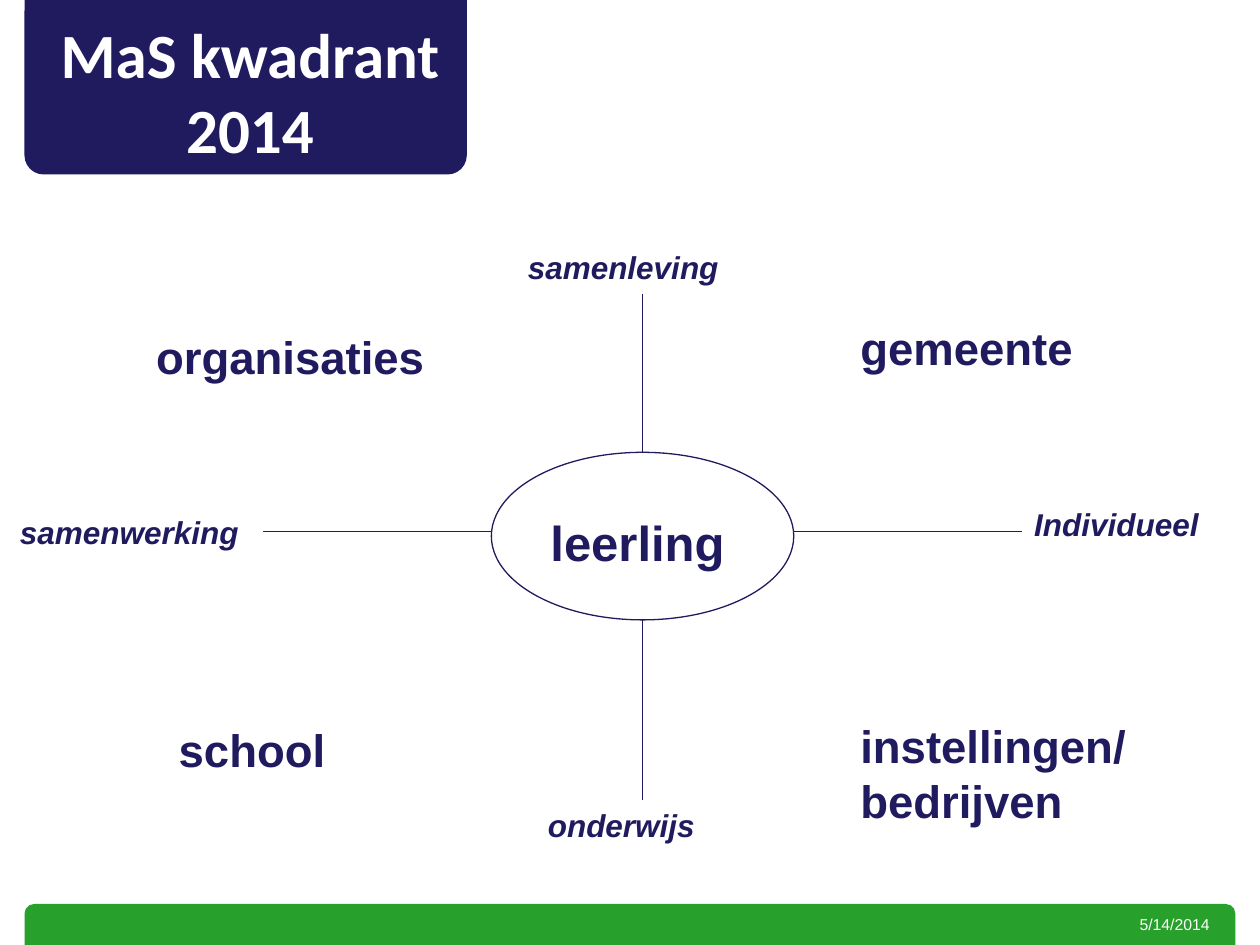
"""Build the MaS quadrant slide: four parties around the pupil."""
import pptx
import pptx.dml.color
import pptx.enum.shapes
import pptx.enum.text
import pptx.oxml.ns
import pptx.util
from lxml import etree

Inches, Pt = pptx.util.Inches, pptx.util.Pt
RGBColor = pptx.dml.color.RGBColor
Kind = pptx.enum.shapes.MSO_SHAPE
Align = pptx.enum.text.PP_ALIGN
Anchor = pptx.enum.text.MSO_ANCHOR
Fit = pptx.enum.text.MSO_AUTO_SIZE

NAVY = RGBColor(0x20, 0x1A, 0x5F)
GREEN = RGBColor(0x27, 0xA1, 0x2B)
WHITE = RGBColor(0xFF, 0xFF, 0xFF)

TITLE = ["MaS kwadrant", "2014"]
DATE = "5/14/2014"
BARS = [
    ((0.2, 7.18, 9.6, 0.43), GREEN, 0.167),
    ((0.2, -0.22, 3.5, 1.6), NAVY, 0.092),
]
PARTIES = [
    (["organisaties"], (1.14, 2.56, 2.55, 0.54)),
    (["gemeente"], (6.73, 2.49, 1.97, 0.54)),
    (["school"], (1.32, 5.68, 2.36, 0.54)),
    (["instellingen/", "bedrijven"], (6.73, 5.65, 2.76, 0.98)),
]
POLES = [
    ("samenleving", (4.09, 1.92, 1.81, 0.4)),
    ("onderwijs", (4.25, 6.35, 1.5, 0.4)),
    ("samenwerking", (0.06, 4.02, 1.94, 0.4)),
    ("Individueel", (8.11, 3.96, 1.61, 0.4)),
]
PUPIL = ("leerling", (4.27, 4.02, 1.65, 0.57))
OVAL = (3.9, 3.59, 2.4, 1.33)
ENDS = {"top": 2.33, "foot": 6.35, "left": 2.09, "right": 8.11}
AXIS = 4.22


def place(box):
    return [Inches(n) for n in box]


def write(frame, lines, size, color=NAVY, font="Arial", bold=True,
          slant=False, align=Align.LEFT, inset=True, wrap=True,
          fit=Fit.SHAPE_TO_FIT_TEXT, anchor=Anchor.TOP, soft=False):
    frame.word_wrap, frame.auto_size = wrap, fit
    frame.vertical_anchor = anchor
    if not inset:
        frame.margin_left = frame.margin_right = 0
        frame.margin_top = frame.margin_bottom = 0
    para = frame.paragraphs[0]
    for n, line in enumerate(lines):
        if n and soft:
            para.add_line_break()
        elif n:
            para = frame.add_paragraph()
        para.alignment = align
        run = para.add_run()
        run.text = line
        face = run.font
        face.name, face.size = font, Pt(size)
        face.bold, face.italic = bold, slant
        face.color.rgb = color


def shape(slide, kind, box, fill=None, line=NAVY):
    item = slide.shapes.add_shape(kind, *place(box))
    item.shadow.inherit = False
    if fill is None:
        item.fill.background()
    else:
        item.fill.solid()
        item.fill.fore_color.rgb = fill
    item.line.color.rgb, item.line.width = line, Pt(0.75)
    return item


def rule(slide, ends):
    kind = pptx.enum.shapes.MSO_CONNECTOR.STRAIGHT
    item = slide.shapes.add_connector(kind, *place(ends))
    item.line.color.rgb, item.line.width = NAVY, Pt(0.75)
    props = item._element.spPr
    etree.SubElement(props, pptx.oxml.ns.qn("a:effectLst"))


def label(slide, lines, box, size, **style):
    item = slide.shapes.add_textbox(*place(box))
    write(item.text_frame, lines, size, **style)


def main():
    deck = pptx.Presentation()
    deck.slide_width, deck.slide_height = Inches(10), Inches(7.5)
    slide = deck.slides.add_slide(deck.slide_layouts[5])

    for box, color, curve in BARS:
        bar = shape(slide, Kind.ROUNDED_RECTANGLE, box, color, color)
        bar.adjustments[0] = curve
    label(slide, [DATE], (8.42, 7.26, 1.18, 0.16), 9, color=WHITE,
          bold=False, align=Align.RIGHT, inset=False, wrap=False, fit=Fit.NONE)

    title = slide.shapes.title
    title.left, title.top, title.width, title.height = place(
        (0.28, 0.13, 3.41, 1.18))
    write(title.text_frame, TITLE, 36, color=WHITE, font="Calibri",
          align=Align.CENTER, inset=False, fit=Fit.NONE,
          anchor=Anchor.MIDDLE, soft=True)
    slide.shapes._spTree.append(title._element)

    left, top, width, height = OVAL
    mid = left + width / 2
    for ends in [
        (mid, ENDS["top"], mid, top),
        (mid, top + height, mid, ENDS["foot"]),
        (ENDS["left"], AXIS, left, AXIS),
        (left + width, AXIS, ENDS["right"], AXIS),
    ]:
        rule(slide, ends)
    for lines, box in PARTIES:
        label(slide, lines, box, 26)
    for text, box in POLES:
        label(slide, [text], box, 18, slant=True)
    shape(slide, Kind.OVAL, OVAL)
    label(slide, [PUPIL[0]], PUPIL[1], 28)
    deck.save("out.pptx")


if __name__ == "__main__":
    main()
